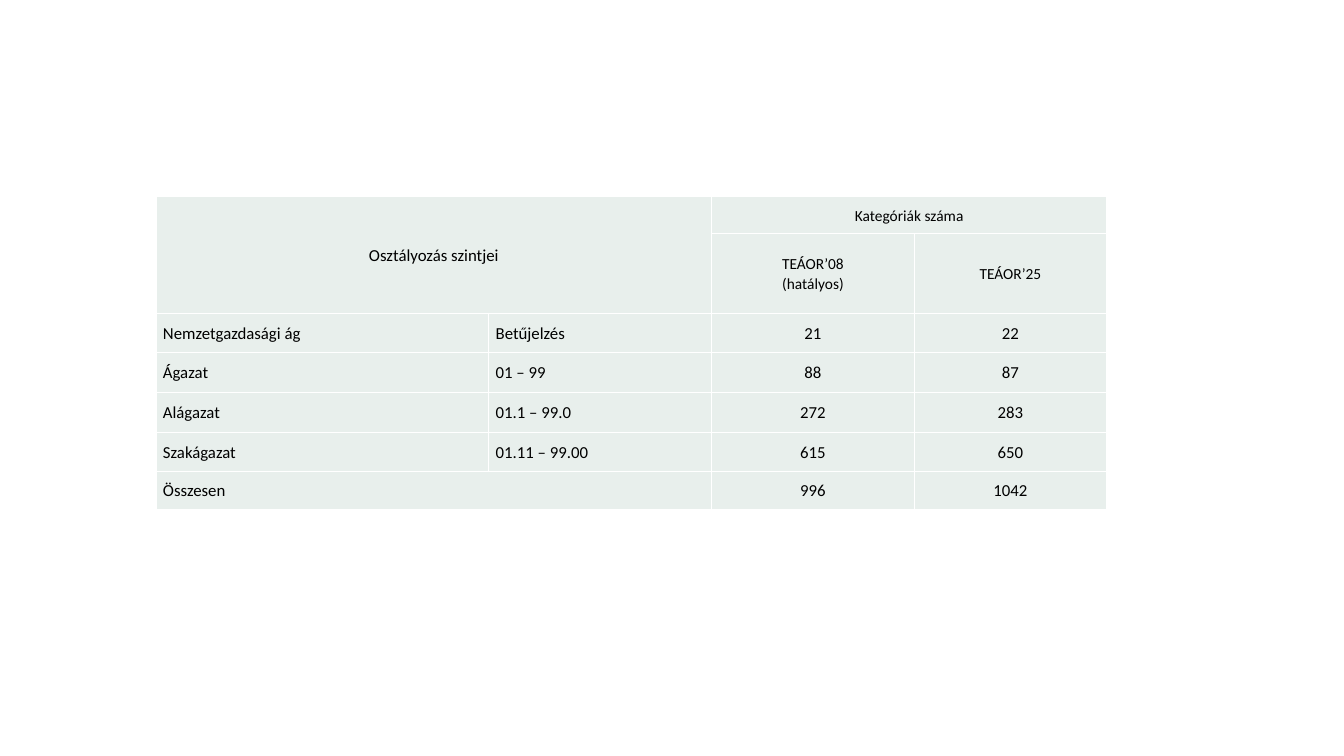
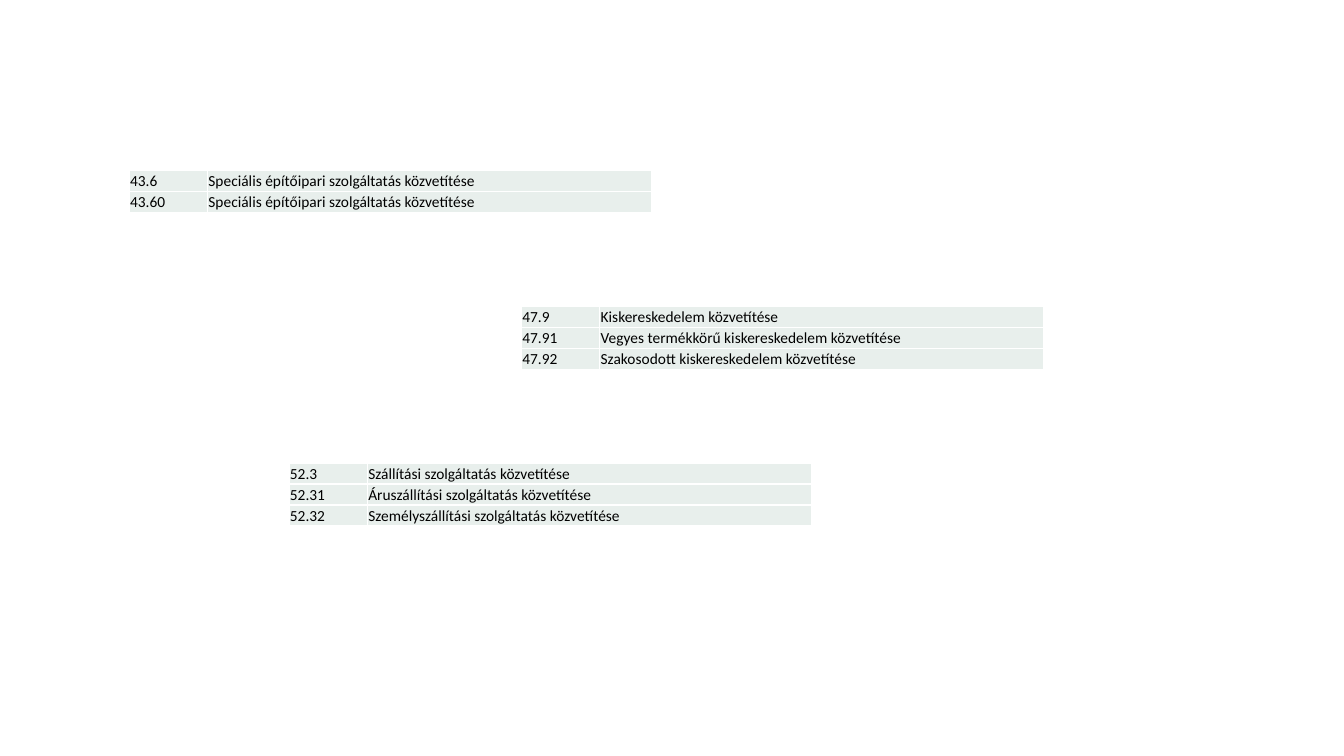
import dataclasses

import pptx
import pptx.dml.color
import pptx.enum.text
import pptx.oxml
import pptx.oxml.ns
import pptx.util

Pt = pptx.util.Pt
ALIGN = pptx.enum.text.PP_ALIGN


@dataclasses.dataclass(frozen=True)
class Theme:
    font: str = "Calibri"
    ink: str = "000000"
    fill: str = "E8EFEC"
    rule: str = "FFFFFF"
    rule_width: float = 1
    body: float = 12
    small: float = 11


@dataclasses.dataclass(frozen=True)
class Style:
    """Text look of a cell; pad holds left, top, right and bottom."""
    size: float
    align: ALIGN
    pad: tuple
    spacing: float = 1.0


THEME = Theme()
WIDE = (5, 0, 5, 0)
HEAD = Style(THEME.small, ALIGN.CENTER, WIDE, 1.07)
COUNT = dataclasses.replace(HEAD, size=THEME.body)
LABEL = dataclasses.replace(COUNT, align=ALIGN.JUSTIFY)
ENTRY = Style(THEME.small, ALIGN.LEFT, (0.7, 0.7, 0.7, 0))

LEVELS = [
    ("Osztályozás szintjei", "", "Kategóriák száma", ""),
    ("", "", "TEÁOR’08\n(hatályos)", "TEÁOR’25"),
    ("Nemzetgazdasági ág", "Betűjelzés", "21", "22"),
    ("Ágazat", "01 – 99", "88", "87"),
    ("Alágazat", "01.1 – 99.0", "272", "283"),
    ("Szakágazat", "01.11 – 99.00", "615", "650"),
    ("Összesen", "", "996", "1042"),
]
LEVEL_COLS = (237.7, 159.3, 144.7, 137.5)
LEVEL_ROWS = (26.5, 57, 28, 28.5, 28.5, 28, 27)
LEVEL_SPANS = [((0, 0), (1, 1)), ((0, 2), (0, 3)), ((6, 0), (6, 1))]

CODE_COLS = (56, 317)
CODE_ROW = 15
GROUPS = [
    (92.2, 121.7, [
        ("43.6", "Speciális építőipari szolgáltatás közvetítése"),
        ("43.60", "Speciális építőipari szolgáltatás közvetítése"),
    ]),
    (372.4, 219, [
        ("47.9", "Kiskereskedelem közvetítése"),
        ("47.91", "Vegyes termékkörű kiskereskedelem közvetítése"),
        ("47.92", "Szakosodott kiskereskedelem közvetítése"),
    ]),
    (206.4, 330.7, [
        ("52.3", "Szállítási szolgáltatás közvetítése"),
        ("52.31", "Áruszállítási szolgáltatás közvetítése"),
        ("52.32", "Személyszállítási szolgáltatás közvetítése"),
    ]),
]


def color(code):
    return pptx.dml.color.RGBColor.from_string(code)


def add_rules(cell):
    """Draw a line on all four sides of a cell."""
    props = cell._tc.get_or_add_tcPr()
    space = pptx.oxml.ns.nsdecls("a")
    for place, side in enumerate("LRTB"):
        line = pptx.oxml.parse_xml(
            f'<a:ln{side} {space} w="{Pt(THEME.rule_width)}"><a:solidFill>'
            f'<a:srgbClr val="{THEME.rule}"/></a:solidFill></a:ln{side}>')
        props.insert(place, line)


def write_cell(cell, text, style):
    cell.fill.solid()
    cell.fill.fore_color.rgb = color(THEME.fill)
    add_rules(cell)
    cell.vertical_anchor = pptx.enum.text.MSO_ANCHOR.MIDDLE
    (cell.margin_left, cell.margin_top,
     cell.margin_right, cell.margin_bottom) = map(Pt, style.pad)
    frame = cell.text_frame
    for index, line in enumerate(text.split("\n")):
        para = frame.add_paragraph() if index else frame.paragraphs[0]
        para.alignment = style.align
        para.line_spacing = style.spacing
        para.font.size = Pt(style.size)
        if line:
            run = para.add_run()
            run.text = line
            run.font.name = THEME.font
            run.font.size = Pt(style.size)
            run.font.color.rgb = color(THEME.ink)


def add_grid(slide, left, top, cols, rows, texts, pick, spans=()):
    """Add a table; pick(row, col) gives the style of each cell."""
    frame = slide.shapes.add_table(
        len(rows), len(cols), Pt(left), Pt(top), Pt(sum(cols)), Pt(sum(rows)))
    table = frame.table
    table.first_row = table.horz_banding = False
    for column, width in zip(table.columns, cols):
        column.width = Pt(width)
    for row, height in zip(table.rows, rows):
        row.height = Pt(height)
    for start, end in spans:
        table.cell(*start).merge(table.cell(*end))
    for r, line in enumerate(texts):
        for c, text in enumerate(line):
            write_cell(table.cell(r, c), text, pick(r, c))


def level_style(row, col):
    if row < 2:
        return HEAD if col > 1 else COUNT
    return COUNT if col > 1 else LABEL


def entry_style(row, col):
    return ENTRY


def main():
    deck = pptx.Presentation()
    deck.slide_width, deck.slide_height = Pt(960), Pt(540)
    blank = deck.slide_layouts[6]

    levels = deck.slides.add_slide(blank)
    add_grid(levels, 111.4, 140.4, LEVEL_COLS, LEVEL_ROWS, LEVELS,
             level_style, LEVEL_SPANS)

    codes = deck.slides.add_slide(blank)
    for left, top, lines in GROUPS:
        add_grid(codes, left, top, CODE_COLS, [CODE_ROW] * len(lines), lines,
                 entry_style)

    deck.save("out.pptx")


if __name__ == "__main__":
    main()
